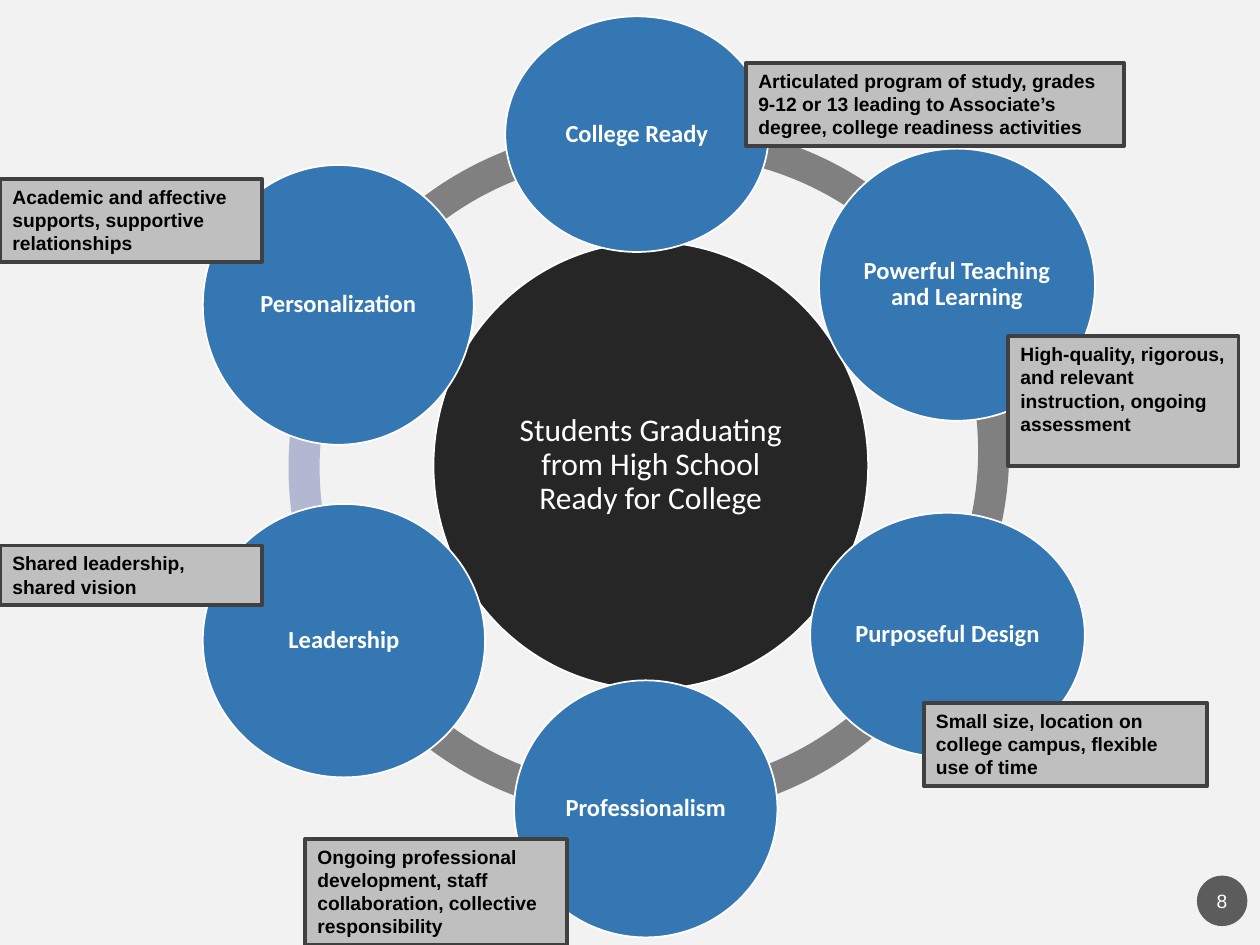
import pptx
import pptx.util
import pptx.dml.color
import pptx.enum.shapes
import pptx.enum.text
import lxml.etree
from pptx.oxml.ns import qn

SHAPES = pptx.enum.shapes.MSO_SHAPE
ANCHOR = pptx.enum.text.MSO_ANCHOR
ALIGN = pptx.enum.text.PP_ALIGN

BLUE, DARK, GRAY, LILAC = "3477B2", "262626", "808080", "B2B8D2"
WHITE, BLACK = "FFFFFF", "000000"
RING_SIZE = 5.48
RING_THICKNESS = 0.045

RING = [
    (2.27, 1.01, 125.85, 162.53, GRAY),
    (2.29, 0.97, 89.47, 125.32, LILAC),
    (2.31, 1.01, 53.12, 90.01, GRAY),
    (2.43, 1.01, 17.29, 54.58, GRAY),
    (2.53, 0.84, 198.15, 19.74, GRAY),
    (2.62, 0.99, 158.11, 195.95, GRAY),
]
GOAL = ("Students Graduating from High School Ready for College", (3.44, 1.92, 3.45, 3.55))
PRINCIPLES = [
    ("College Ready", (4.01, 0.13, 2.09, 1.87)),
    ("Powerful Teaching and Learning", (6.5, 1.18, 2.19, 2.16)),
    ("Purposeful Design", (6.43, 4.07, 2.18, 1.94)),
    ("Professionalism", (4.08, 5.4, 2.09, 2.04)),
    ("Leadership", (1.61, 4, 2.24, 2.17)),
    ("Personalization", (1.61, 1.31, 2.15, 2.22)),
]
DETAILS = [
    ("High-quality, rigorous, and relevant instruction, ongoing assessment", (8, 2.67, 1.83, 1.03)),
    ("Small size, location on college campus, flexible use of time", (7.33, 5.58, 2.25, 0.66)),
    ("Academic and affective supports, supportive relationships", (0, 1.42, 2.08, 0.66)),
    ("Ongoing professional development, staff collaboration, collective responsibility",
     (2.42, 6.66, 2.08, 0.84)),
    ("Articulated program of study, grades 9-12 or 13 leading to Associate’s degree, "
     "college readiness activities", (5.92, 0.5, 3, 0.66)),
    ("Shared leadership, shared vision", (0, 4.33, 2.08, 0.47)),
]
PAGE_NUMBER = ("8", (9.5, 6.95, 0.4, 0.4))


def color(value):
    return pptx.dml.color.RGBColor.from_string(value)


def add_shape(page, kind, place, fill, line=None, width=1):
    shape = page.shapes.add_shape(kind, *map(pptx.util.Inches, place))
    shape.shadow.inherit = False
    shape.fill.solid()
    shape.fill.fore_color.rgb = color(fill)
    if line:
        shape.line.color.rgb = color(line)
        shape.line.width = pptx.util.Pt(width)
    else:
        shape.line.fill.background()
    return shape


def write(shape, text, size, font, ink, bold=False, align=ALIGN.CENTER,
          anchor=ANCHOR.MIDDLE, inset=(0.02, 0.02), spacing=1):
    frame = shape.text_frame
    frame.word_wrap = True
    frame.vertical_anchor = anchor
    frame.margin_left = frame.margin_right = pptx.util.Inches(inset[0])
    frame.margin_top = frame.margin_bottom = pptx.util.Inches(inset[1])
    para = frame.paragraphs[0]
    para.alignment = align
    para.line_spacing = spacing
    span = para.add_run()
    span.text = text
    span.font.size = pptx.util.Pt(size)
    span.font.name = font
    span.font.bold = bold
    span.font.color.rgb = color(ink)


def main():
    deck = pptx.Presentation()
    deck.slide_width = pptx.util.Inches(10)
    deck.slide_height = pptx.util.Inches(7.5)
    page = deck.slides.add_slide(deck.slide_layouts[6])
    page.background.fill.solid()
    page.background.fill.fore_color.rgb = color("F2F2F2")

    for left, top, start, end, fill in RING:
        arc = add_shape(page, SHAPES.BLOCK_ARC, (left, top, RING_SIZE, RING_SIZE), fill)
        for index, value in enumerate((start, end, RING_THICKNESS)):
            arc.adjustments[index] = value

    text, place = GOAL
    circle = add_shape(page, SHAPES.OVAL, place, DARK, WHITE)
    write(circle, text, 18, "Calibri", WHITE, inset=(0.03, 0.03), spacing=0.9)

    for text, place in PRINCIPLES:
        circle = add_shape(page, SHAPES.OVAL, place, BLUE, WHITE)
        write(circle, text, 14, "Calibri", WHITE, bold=True, spacing=0.9)

    for text, place in DETAILS:
        box = add_shape(page, SHAPES.RECTANGLE, place, "BFBFBF", "404040", 2.25)
        write(box, text, 11, "Arial", BLACK, bold=True, align=ALIGN.LEFT,
              anchor=ANCHOR.TOP, inset=(0.1, 0.05))

    text, place = PAGE_NUMBER
    badge = add_shape(page, SHAPES.OVAL, place, "1D1D1D")
    tint = badge.fill._xPr.find(qn("a:solidFill"))[0]
    lxml.etree.SubElement(tint, qn("a:alpha")).set("val", "70000")
    write(badge, text, 11, "Arial", WHITE, inset=(0.02, 0.05))

    deck.save("out.pptx")


if __name__ == "__main__":
    main()
